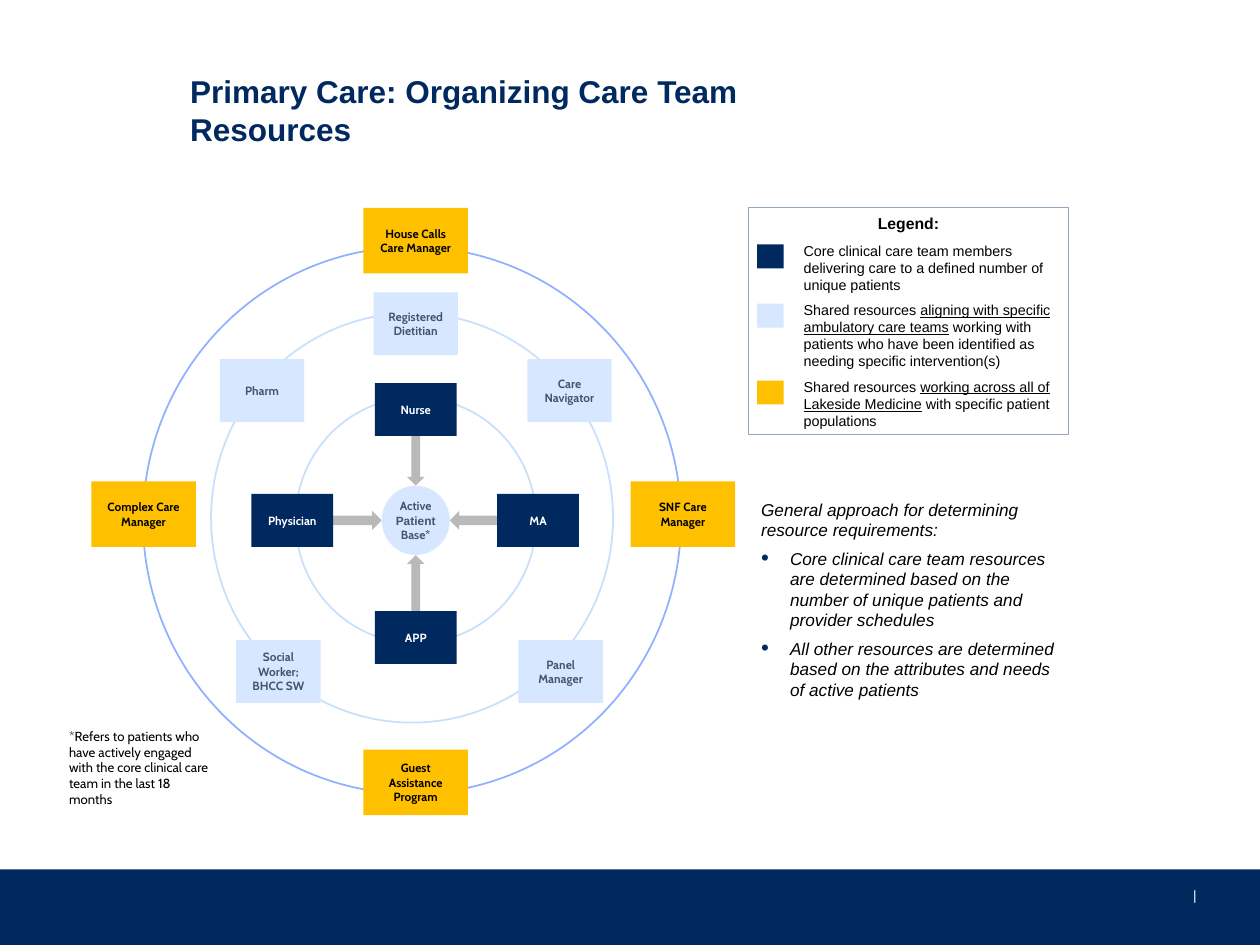
from lxml.etree import SubElement
from pptx import Presentation
from pptx.dml.color import RGBColor
from pptx.enum.shapes import MSO_SHAPE as Shape
from pptx.enum.text import MSO_ANCHOR as Anchor, MSO_AUTO_SIZE as AutoSize, PP_ALIGN as Align
from pptx.oxml.ns import qn
from pptx.util import Inches, Pt

NAVY, PALE, GOLD, SLATE = "002960", "D6E7FF", "FFC000", "44546A"
BLACK, WHITE, GREY = "000000", "FFFFFF", "B9B9B9"
TITLE = "Primary Care: Organizing Care Team Resources"
HUB_X, HUB_Y = 3.3, 4.13
HUB_SIZE = (0.54, 0.55)
HUB_LINES = [("Active", "Cabin"), ("Patient", "Arial"), ("Base*", "Cabin")]

RINGS = [
    (3.27, 4.13, 4.27, 4.34, "91B0FF"),
    (3.27, 4.11, 3.19, 3.25, "C7E0FB"),
    (3.3, 4.13, 1.91, 1.95, "C7E0FB"),
]
ARROWS = [
    (Shape.RIGHT_ARROW, -1, 0),
    (Shape.LEFT_ARROW, 1, 0),
    (Shape.DOWN_ARROW, 0, -1),
    (Shape.UP_ARROW, 0, 1),
]
TIERS = [
    {"size": (0.83, 0.52), "fill": GOLD, "ink": BLACK, "roles": [
        ("Complex Care Manager", 1.14, 4.08), ("SNF Care Manager", 5.42, 4.08),
        ("House Calls Care Manager", HUB_X, 1.91),
        ("Guest Assistance Program", HUB_X, 6.21)]},
    {"size": (0.67, 0.5), "fill": PALE, "ink": SLATE, "roles": [
        ("Social Worker; BHCC SW", 2.21, 5.33), ("Pharm", 2.08, 3.1),
        ("Registered Dietitian", HUB_X, 2.57), ("Panel Manager", 4.45, 5.33),
        ("Care Navigator", 4.52, 3.1)]},
    {"size": (0.65, 0.42), "fill": NAVY, "ink": WHITE, "roles": [
        ("Physician", 2.32, HUB_Y), ("Nurse", HUB_X, 3.25),
        ("MA", 4.27, HUB_Y), ("APP", HUB_X, 5.06)]},
]
LEGEND = [
    (NAVY, 1.87, 0.52, ["Core clinical care team members delivering care to a "
                        "defined number of unique patients"]),
    (PALE, 2.34, 0.66, ["Shared resources ", "aligning with specific ambulatory care teams",
                        " working with patients who have been identified as "
                        "needing specific intervention(s)"]),
    (GOLD, 2.95, 0.52, ["Shared resources ", "working across all of Lakeside Medicine",
                        " with specific patient populations"]),
]
APPROACH = [
    "General approach for determining resource requirements:",
    "Core clinical care team resources are determined based on the number of "
    "unique patients and provider schedules",
    "All other resources are determined based on the attributes and needs of active patients",
]
FOOTNOTE = ("*Refers to patients who have actively engaged with the core clinical "
            "care team in the last 18 months")


def color(value):
    return RGBColor.from_string(value)


def style(font, size, ink, name="Arial", bold=False, italic=False):
    font.name, font.size, font.bold, font.italic = name, Pt(size), bold, italic
    font.color.rgb = color(ink)


def place(item, left, top, width, height):
    item.left, item.top = Inches(left), Inches(top)
    item.width, item.height = Inches(width), Inches(height)


def set_insets(frame, inset):
    frame.margin_left = frame.margin_right = Inches(inset)
    frame.margin_top = frame.margin_bottom = Inches(inset)


def add_shape(page, kind, left, top, width, height, fill=None, line=None, weight=1):
    shape = page.shapes.add_shape(kind, *map(Inches, (left, top, width, height)))
    shape.shadow.inherit = False
    if fill:
        shape.fill.solid()
        shape.fill.fore_color.rgb = color(fill)
    else:
        shape.fill.background()
    if line:
        shape.line.color.rgb = color(line)
        shape.line.width = Pt(weight)
    else:
        shape.line.fill.background()
    return shape


def add_centered(page, kind, x, y, width, height, **look):
    return add_shape(page, kind, x - width / 2, y - height / 2, width, height, **look)


def add_text(page, left, top, width, height, pieces, size, ink, name="Arial"):
    box = page.shapes.add_textbox(*map(Inches, (left, top, width, height)))
    box.text_frame.word_wrap = True
    para = box.text_frame.paragraphs[0]
    for index, piece in enumerate(pieces):
        span = para.add_run()
        span.text = piece
        style(span.font, size, ink, name)
        if index == 1:
            span.font.underline = True
    return box


def set_bullet(para, symbol=None):
    props = para._p.get_or_add_pPr()
    indent = Inches(0.23) if symbol else 0
    props.set("marL", str(indent))
    props.set("indent", str(-indent))
    if not symbol:
        SubElement(props, qn("a:buNone"))
        return
    ink = SubElement(props, qn("a:buClr"))
    SubElement(ink, qn("a:srgbClr"), val=NAVY)
    SubElement(props, qn("a:buSzPct"), val="130000")
    SubElement(props, qn("a:buFont"), typeface="Arial")
    SubElement(props, qn("a:buChar"), char=symbol)


def add_footer(page):
    add_shape(page, Shape.RECTANGLE, 0, 6.9, 10, 0.6, fill=NAVY)
    mark = add_text(page, 9.47, 7.04, 0.04, 0.17, ["|"], 7.7, WHITE)
    mark.text_frame.word_wrap = False
    set_insets(mark.text_frame, 0)


def add_title(page):
    title = page.shapes.title
    place(title, 1.51, 0.57, 5.5, 0.61)
    frame = title.text_frame
    frame.text = TITLE
    frame.auto_size = AutoSize.NONE
    frame.vertical_anchor = Anchor.TOP
    set_insets(frame, 0)
    para = frame.paragraphs[0]
    para.alignment = Align.LEFT
    style(para.runs[0].font, 18, NAVY, bold=True)


def add_diagram(page):
    for x, y, width, height, line in RINGS:
        add_centered(page, Shape.OVAL, x, y, width, height, line=line)
    for kind, dx, dy in ARROWS:
        length, thickness = (0.46, 0.15) if dx else (0.51, 0.14)
        reach = (HUB_SIZE[0] if dx else HUB_SIZE[1]) / 2 + length / 2
        size = (length, thickness) if dx else (thickness, length)
        add_centered(page, kind, HUB_X + dx * reach, HUB_Y + dy * reach, *size, fill=GREY)
    for tier in TIERS:
        for role, x, y in tier["roles"]:
            box = add_centered(page, Shape.RECTANGLE, x, y, *tier["size"], fill=tier["fill"])
            box.text_frame.text = role
            box.text_frame.vertical_anchor = Anchor.MIDDLE
            para = box.text_frame.paragraphs[0]
            para.alignment = Align.CENTER
            style(para.runs[0].font, 6.8, tier["ink"], "Cabin", bold=True)
    hub = add_centered(page, Shape.OVAL, HUB_X, HUB_Y, *HUB_SIZE, fill=PALE)
    frame = hub.text_frame
    frame.text = "\n".join(word for word, _ in HUB_LINES)
    frame.word_wrap = False
    frame.vertical_anchor = Anchor.MIDDLE
    set_insets(frame, 0.07)
    for para, (_, name) in zip(frame.paragraphs, HUB_LINES):
        para.alignment = Align.CENTER
        style(para.runs[0].font, 6.8, SLATE, name, bold=True)


def add_legend(page):
    for fill, top, height, pieces in LEGEND:
        add_text(page, 6.28, top, 2.25, height, pieces, 8.2, BLACK)
        add_shape(page, Shape.RECTANGLE, 6.01, top + 0.07, 0.21, 0.19, fill=fill)
    border = add_shape(page, Shape.RECTANGLE, 5.94, 1.65, 2.54, 1.8, line="93A6BA", weight=0.75)
    border.text_frame.text = "Legend:"
    border.text_frame.vertical_anchor = Anchor.TOP
    para = border.text_frame.paragraphs[0]
    para.alignment = Align.CENTER
    style(para.runs[0].font, 9, BLACK, bold=True)


def add_approach(page):
    body = page.placeholders[1]
    place(body, 5.94, 3.91, 2.54, 1.69)
    frame = body.text_frame
    frame.text = "\n".join(APPROACH)
    frame.auto_size = AutoSize.NONE
    for index, para in enumerate(frame.paragraphs):
        para.space_before = Pt(2.2 if index else 0)
        para.space_after = Pt(2.2)
        set_bullet(para, "•" if index else None)
        style(para.runs[0].font, 9.8, BLACK, italic=True)


def main():
    """Build the care team slide."""
    deck = Presentation()
    deck.slide_width, deck.slide_height = Inches(10), Inches(7.5)
    page = deck.slides.add_slide(deck.slide_layouts[1])
    add_footer(page)
    add_title(page)
    add_diagram(page)
    add_legend(page)
    add_text(page, 0.45, 5.73, 1.34, 0.61, [FOOTNOTE], 7.5, BLACK, "Cabin")
    add_approach(page)
    deck.save("out.pptx")


if __name__ == "__main__":
    main()
